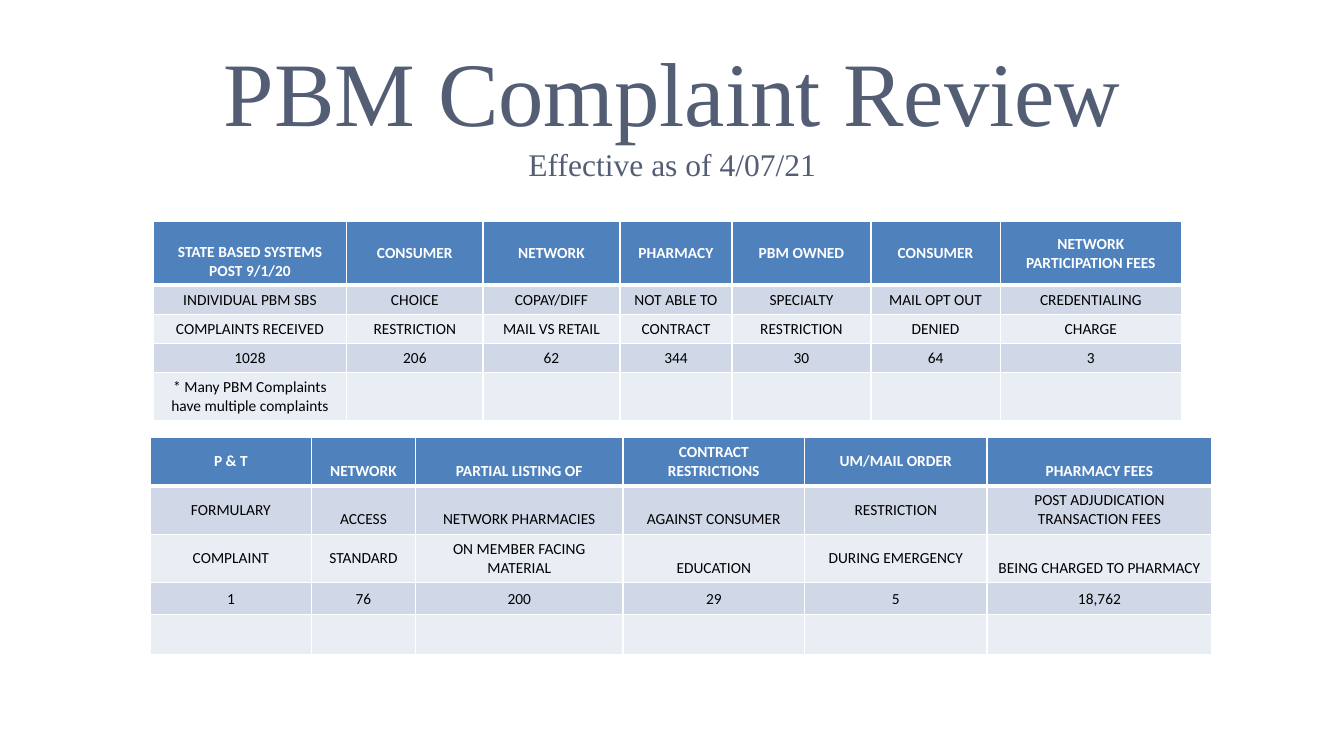
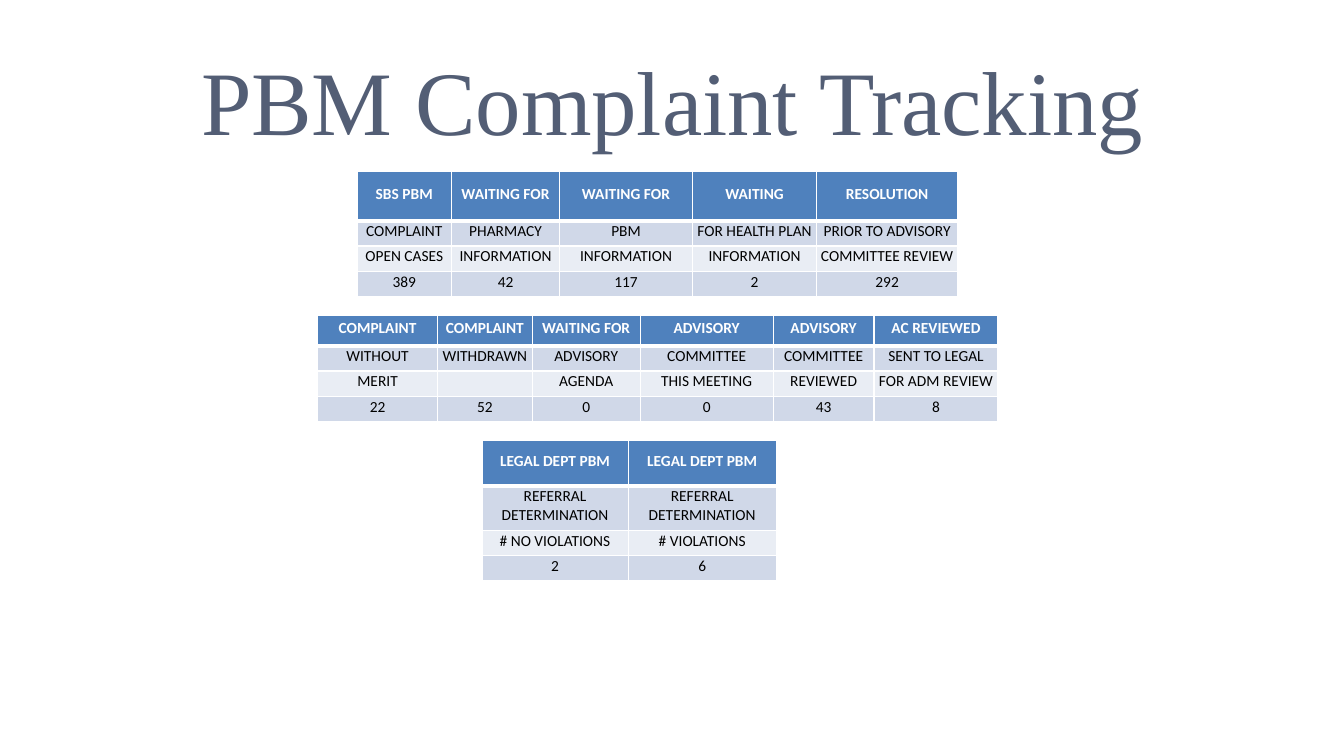
from lxml import etree
from pptx import Presentation
from pptx import util as u
from pptx.dml.color import RGBColor
from pptx.enum import text
from pptx.oxml.ns import qn

THEME = {
    "title": {"size": u.Pt(64.8), "name": "Times New Roman", "color": "535E75"},
    "subtitle": {"size": u.Pt(22.5), "name": "Times New Roman", "color": "535E75"},
    "header": {"size": u.Pt(11), "name": "Calibri", "bold": True, "color": "FFFFFF"},
    "body": {"size": u.Pt(11), "name": "Calibri", "bold": False, "color": "000000"},
    "header_fill": "4F81BD",
    "band_fills": ("E9EDF4", "D0D8E8"),
    "rule": "FFFFFF",
    "rule_width": 1,
    "header_rule_width": 3,
}
ANCHORS = {"m": text.MSO_ANCHOR.MIDDLE, "b": text.MSO_ANCHOR.BOTTOM}
ROOMY = (0.1, 0.05, 0.1, 0.05)
TIGHT = (0.01, 0.01, 0.01, 0.05)

SLIDES = [
    {
        "title": ["PBM Complaint Review", "Effective as of 4/07/21"],
        "title_height": 1.45,
        "margins": ROOMY,
        "tables": [
            {
                "at": (1.52, 2.2),
                "columns": (1.92, 1.35, 1.36, 1.11, 1.38, 1.28, 1.8),
                "heights": (0.63, 0.29, 0.29, 0.29, 0.47),
                "anchors": ["bmmmmmm"] * 5,
                "rows": [
                    ("STATE BASED SYSTEMS POST 9/1/20", "CONSUMER", "NETWORK", "PHARMACY",
                     "PBM OWNED", "CONSUMER", "NETWORK PARTICIPATION FEES"),
                    ("INDIVIDUAL PBM SBS", "CHOICE", "COPAY/DIFF", "NOT ABLE TO",
                     "SPECIALTY", "MAIL OPT OUT", "CREDENTIALING"),
                    ("COMPLAINTS RECEIVED", "RESTRICTION", "MAIL VS RETAIL", "CONTRACT",
                     "RESTRICTION", "DENIED", "CHARGE"),
                    ("1028", "206", "62", "344", "30", "64", "3"),
                    ("* Many PBM Complaints have multiple complaints", "", "", "", "", "", ""),
                ],
            },
            {
                "at": (1.49, 4.34),
                "columns": (1.6, 1.03, 2.06, 1.8, 1.81, 2.23),
                "heights": (0.48, 0.48, 0.48, 0.32, 0.39),
                "anchors": ["mbbbmb", "mbbbmb", "mmbbmb", "mmmmmm", "mmmmmm"],
                "rows": [
                    ("P & T", "NETWORK", "PARTIAL LISTING OF", "CONTRACT RESTRICTIONS",
                     "UM/MAIL ORDER", "PHARMACY FEES"),
                    ("FORMULARY", "ACCESS", "NETWORK PHARMACIES", "AGAINST CONSUMER",
                     "RESTRICTION", "POST ADJUDICATION TRANSACTION FEES"),
                    ("COMPLAINT", "STANDARD", "ON MEMBER FACING MATERIAL", "EDUCATION",
                     "DURING EMERGENCY", "BEING CHARGED TO PHARMACY"),
                    ("1", "76", "200", "29", "5", "18,762"),
                    ("", "", "", "", "", ""),
                ],
            },
        ],
    },
    {
        "title": ["PBM Complaint Tracking"],
        "title_height": 1.25,
        "margins": TIGHT,
        "tables": [
            {
                "at": (3.54, 1.7),
                "columns": (0.94, 1.07, 1.32, 1.23, 1.4),
                "heights": (0.49, 0.25, 0.25, 0.25),
                "anchors": ["mmmmm"] * 4,
                "rows": [
                    ("SBS PBM", "WAITING FOR", "WAITING FOR", "WAITING", "RESOLUTION"),
                    ("COMPLAINT", "PHARMACY", "PBM", "FOR HEALTH PLAN", "PRIOR TO ADVISORY"),
                    ("OPEN CASES", "INFORMATION", "INFORMATION", "INFORMATION", "COMMITTEE REVIEW"),
                    ("389", "42", "117", "2", "292"),
                ],
            },
            {
                "at": (3.15, 3.13),
                "columns": (1.19, 0.94, 1.07, 1.32, 1, 1.23),
                "heights": (0.3, 0.25, 0.25, 0.25),
                "anchors": ["mmmmmm"] * 4,
                "rows": [
                    ("COMPLAINT", "COMPLAINT", "WAITING FOR", "ADVISORY", "ADVISORY", "AC REVIEWED"),
                    ("WITHOUT", "WITHDRAWN", "ADVISORY", "COMMITTEE", "COMMITTEE", "SENT TO LEGAL"),
                    ("MERIT", "", "AGENDA", "THIS MEETING", "REVIEWED", "FOR ADM REVIEW"),
                    ("22", "52", "0", "0", "43", "8"),
                ],
            },
            {
                "at": (4.78, 4.37),
                "columns": (1.45, 1.47),
                "heights": (0.45, 0.44, 0.25, 0.25),
                "anchors": ["mm"] * 4,
                "rows": [
                    ("LEGAL DEPT PBM", "LEGAL DEPT PBM"),
                    ("REFERRAL DETERMINATION", "REFERRAL DETERMINATION"),
                    ("# NO VIOLATIONS", "# VIOLATIONS"),
                    ("2", "6"),
                ],
            },
        ],
    },
]


def write(paragraph, words, style):
    paragraph.alignment = text.PP_ALIGN.CENTER
    if not words:
        paragraph._p.get_or_add_endParaRPr().set("sz", str(int(style["size"].pt * 100)))
        return
    run = paragraph.add_run()
    run.text = words
    for key, value in style.items():
        if key == "color":
            run.font.color.rgb = RGBColor.from_string(value)
        else:
            setattr(run.font, key, value)


def add_title(slide, lines, height):
    frame = slide.shapes.add_textbox(
        u.Inches(0.67), u.Inches(0.36), u.Inches(12), u.Inches(height)).text_frame
    frame.word_wrap = True
    frame.vertical_anchor = text.MSO_ANCHOR.MIDDLE
    for number, (words, role) in enumerate(zip(lines, ("title", "subtitle"))):
        paragraph = frame.add_paragraph() if number else frame.paragraphs[0]
        write(paragraph, words, THEME[role])


def draw_borders(cell, row):
    widths = {side: THEME["rule_width"] for side in "LRTB"}
    if row < 2:
        widths["B" if row == 0 else "T"] = THEME["header_rule_width"]
    properties = cell._tc.get_or_add_tcPr()
    for side, width in widths.items():
        line = etree.SubElement(properties, qn(f"a:ln{side}"), w=str(u.Pt(width)))
        fill = etree.SubElement(line, qn("a:solidFill"))
        etree.SubElement(fill, qn("a:srgbClr"), val=THEME["rule"])


def fill_cell(cell, words, row, anchor, margins):
    draw_borders(cell, row)
    cell.fill.solid()
    colour = THEME["band_fills"][row % 2] if row else THEME["header_fill"]
    cell.fill.fore_color.rgb = RGBColor.from_string(colour)
    cell.vertical_anchor = ANCHORS[anchor]
    for side, margin in zip(("left", "top", "right", "bottom"), margins):
        setattr(cell, f"margin_{side}", u.Inches(margin))
    write(cell.text_frame.paragraphs[0], words, THEME["body" if row else "header"])


def add_complaints(slide, complaints, margins):
    columns, heights = complaints["columns"], complaints["heights"]
    sizes = (*complaints["at"], sum(columns), sum(heights))
    table = slide.shapes.add_table(
        len(heights), len(columns), *(u.Inches(size) for size in sizes)).table
    table.horz_banding = False
    for column, width in zip(table.columns, columns):
        column.width = u.Inches(width)
    for row, (height, entries, anchors) in enumerate(
            zip(heights, complaints["rows"], complaints["anchors"])):
        table.rows[row].height = u.Inches(height)
        for column, (words, anchor) in enumerate(zip(entries, anchors)):
            fill_cell(table.cell(row, column), words, row, anchor, margins)


def main():
    deck = Presentation()
    deck.slide_width, deck.slide_height = u.Inches(13.33), u.Inches(7.5)
    for content in SLIDES:
        slide = deck.slides.add_slide(deck.slide_layouts[6])
        add_title(slide, content["title"], content["title_height"])
        for complaints in content["tables"]:
            add_complaints(slide, complaints, content["margins"])
    deck.save("out.pptx")


if __name__ == "__main__":
    main()
